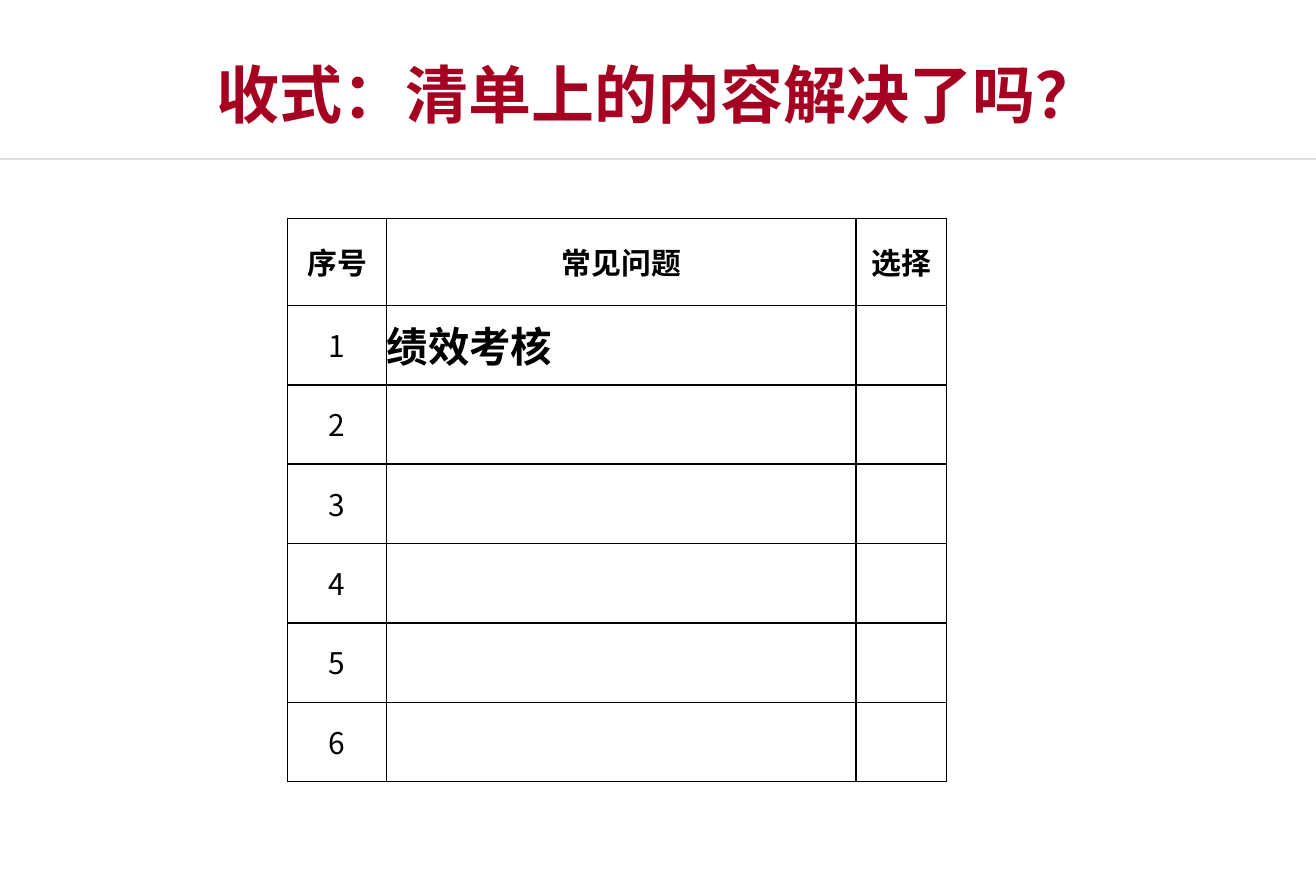
from lxml.etree import SubElement
from pptx import Presentation
from pptx.dml.color import RGBColor
from pptx.enum.shapes import MSO_CONNECTOR
from pptx.enum.text import MSO_ANCHOR, PP_ALIGN
from pptx.oxml.ns import qn
from pptx.util import Cm, Inches, Pt

HEADING = "收式：清单上的内容解决了吗？"
HEADERS = ["序号", "常见问题", "选择"]
PROBLEMS = ["绩效考核", "", "", "", "", ""]
ROWS = [HEADERS] + [[str(number), problem, ""] for number, problem in enumerate(PROBLEMS, 1)]

FONT = "Noto Sans CJK SC"
RED, BLACK, GREY = "A50021", "000000", "DDDDDD"
SLIDE_WIDTH, SLIDE_HEIGHT = Cm(28), Inches(7.5)
RULE_Y = Inches(1.33)
CHECKLIST_LEFT, CHECKLIST_TOP = Inches(2.41), Inches(1.83)
CHECKLIST_HEIGHT, HEADER_HEIGHT = Inches(4.72), Inches(0.73)
COLUMN_WIDTHS = [Inches(0.83), Inches(3.93), Inches(0.76)]
PROBLEM_HEIGHT = (CHECKLIST_HEIGHT - HEADER_HEIGHT) // len(PROBLEMS)
ROW_HEIGHTS = [HEADER_HEIGHT] + [PROBLEM_HEIGHT] * len(PROBLEMS)


def color(value):
    return RGBColor.from_string(value)


def write(frame, text, size, bold, ink, align):
    frame.text = text
    paragraph = frame.paragraphs[0]
    paragraph.alignment = align
    for run in paragraph.runs:
        font = run.font
        font.name, font.size, font.bold = FONT, Pt(size), bold
        font.color.rgb = color(ink)
        SubElement(run._r.get_or_add_rPr(), qn("a:ea"), typeface=FONT)
    return paragraph


def add_borders(cell):
    properties = cell._tc.get_or_add_tcPr()
    for index, side in enumerate(("lnL", "lnR", "lnT", "lnB")):
        border = properties.makeelement(qn(f"a:{side}"), {"w": str(Pt(1))})
        fill = SubElement(border, qn("a:solidFill"))
        SubElement(fill, qn("a:srgbClr"), val=BLACK)
        properties.insert(index, border)


def add_heading(slide):
    rule = slide.shapes.add_connector(MSO_CONNECTOR.STRAIGHT, 0, RULE_Y, SLIDE_WIDTH, RULE_Y)
    rule.line.color.rgb = color(GREY)
    rule.line.width = Pt(1)
    SubElement(rule._element.spPr, qn("a:effectLst"))

    heading = slide.shapes.add_textbox(0, Inches(0.42), SLIDE_WIDTH, Inches(0.73))
    frame = heading.text_frame
    frame.word_wrap = True
    frame.vertical_anchor = MSO_ANCHOR.BOTTOM
    write(frame, HEADING, 38, True, RED, PP_ALIGN.CENTER)


def add_checklist(slide):
    checklist = slide.shapes.add_table(
        len(ROWS), len(HEADERS), CHECKLIST_LEFT, CHECKLIST_TOP,
        sum(COLUMN_WIDTHS), CHECKLIST_HEIGHT).table
    checklist.first_row = checklist.horz_banding = False
    for column, width in zip(checklist.columns, COLUMN_WIDTHS):
        column.width = width
    for row, height in zip(checklist.rows, ROW_HEIGHTS):
        row.height = height

    for r, entries in enumerate(ROWS):
        for c, entry in enumerate(entries):
            cell = checklist.cell(r, c)
            cell.margin_left = cell.margin_right = cell.margin_top = cell.margin_bottom = 0
            cell.vertical_anchor = MSO_ANCHOR.MIDDLE
            cell.fill.background()
            add_borders(cell)
            is_header, is_problem = r == 0, r > 0 and c == 1
            paragraph = write(
                cell.text_frame, entry, 25 if is_problem else 18, is_header or is_problem,
                BLACK, PP_ALIGN.LEFT if is_problem else PP_ALIGN.CENTER)
            paragraph.line_spacing = 0.95


def main():
    presentation = Presentation()
    presentation.slide_width = SLIDE_WIDTH
    presentation.slide_height = SLIDE_HEIGHT
    slide = presentation.slides.add_slide(presentation.slide_layouts[6])
    add_heading(slide)
    add_checklist(slide)
    presentation.save("out.pptx")


if __name__ == "__main__":
    main()
